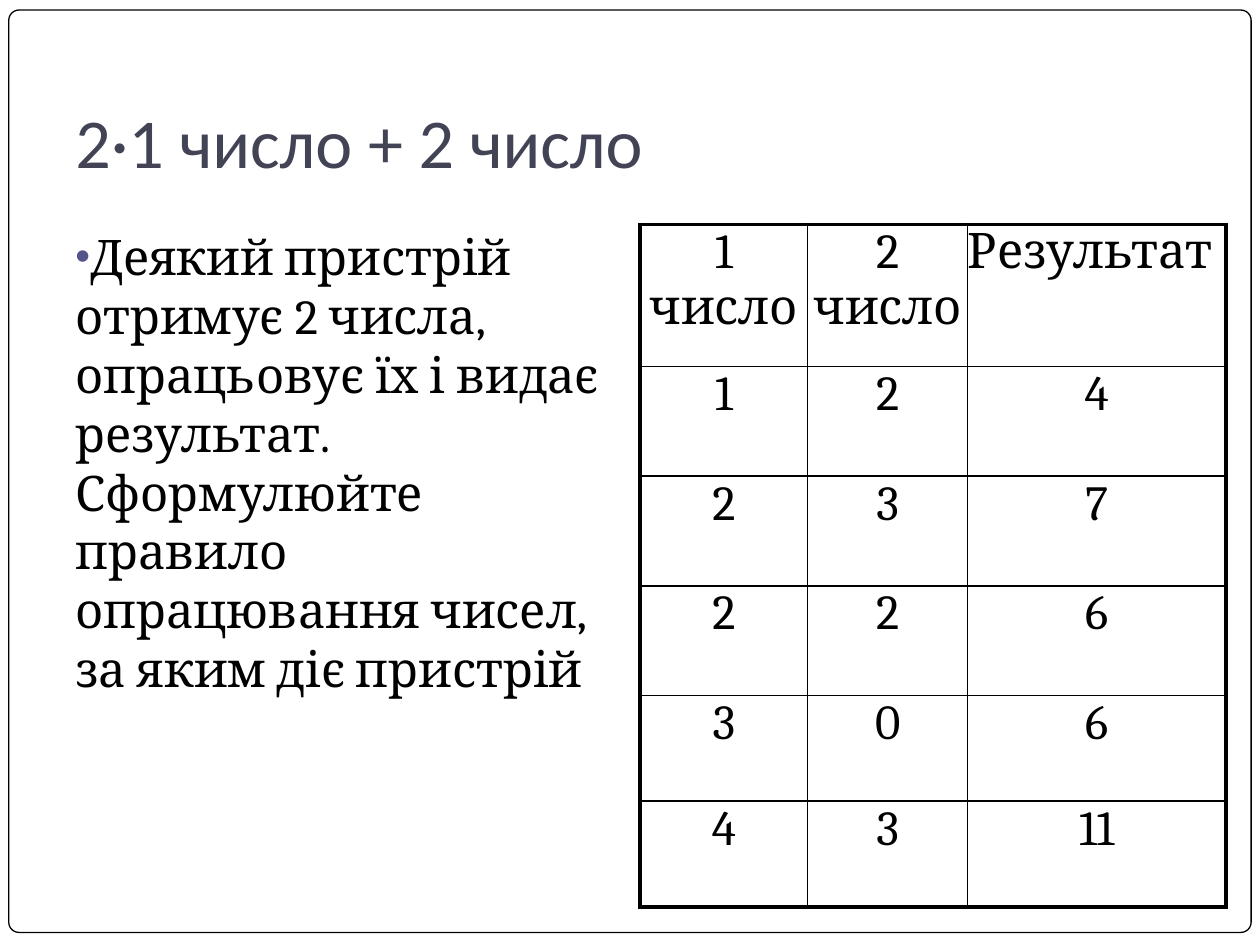
from lxml.etree import SubElement
from pptx import Presentation
from pptx.dml.color import RGBColor
from pptx.enum.shapes import MSO_SHAPE
from pptx.enum.text import MSO_ANCHOR, PP_ALIGN
from pptx.oxml import parse_xml
from pptx.oxml.ns import nsdecls, qn
from pptx.util import Inches, Pt

COLORS = {"ink": "000000", "paper": "FFFFFF", "title": "424456", "bullet": "53548A"}
THIN, THICK = 1, 2.25
COLS = [1.33, 1.27, 2.05]
ROWS = [1.13, 0.87, 0.87, 0.87, 0.84, 0.84]
DATA = [
    ["1 число", "2 число", "Результат"],
    [1, 2, 4],
    [2, 3, 7],
    [2, 2, 6],
    [3, 0, 6],
    [4, 3, 11],
]


def color(name):
    return RGBColor.from_string(COLORS[name])


def style(para, size, face, tone):
    for run in para.runs:
        run.font.size = Pt(size)
        run.font.name = face
        run.font.bold = False
        run.font.color.rgb = color(tone)


def add_text(slide, box, text, size, face, tone):
    frame = slide.shapes.add_textbox(*map(Inches, box)).text_frame
    frame.word_wrap = True
    frame.text = text
    style(frame.paragraphs[0], size, face, tone)
    return frame


def add_frame(slide, box):
    frame = slide.shapes.add_shape(MSO_SHAPE.ROUNDED_RECTANGLE, *map(Inches, box))
    frame.adjustments[0] = 0.011
    frame.shadow.inherit = False
    frame.fill.solid()
    frame.fill.fore_color.rgb = color("paper")
    frame.line.color.rgb = color("ink")
    frame.line.width = Pt(0.75)


def add_title(slide, box):
    frame = add_text(slide, box, "2·1 число + 2 число", 40, "Calibri", "title")
    frame.vertical_anchor = MSO_ANCHOR.BOTTOM
    frame.margin_bottom = Inches(0.1)


def add_task(slide, box):
    text = ("Деякий пристрій отримує 2 числа, опрацьовує їх і видає результат. "
            "Сформулюйте правило опрацювання чисел, за яким діє пристрій")
    para = add_text(slide, box, text, 28, "Cambria", "ink").paragraphs[0]
    para.space_before = Pt(5.8)
    props = para._p.get_or_add_pPr()
    props.set("marL", "0")
    props.set("indent", "0")
    tint = SubElement(props, qn("a:buClr"))
    SubElement(tint, qn("a:srgbClr"), val=COLORS["bullet"])
    SubElement(props, qn("a:buSzPct"), val="86000")
    SubElement(props, qn("a:buFont"), typeface="Arial")
    SubElement(props, qn("a:buChar"), char="•")


def set_edges(cell, edges):
    """Draw the cell borders; edges maps L, R, T, B, in that order, to points."""
    props = cell._tc.get_or_add_tcPr()
    for i, (side, width) in enumerate(edges.items()):
        props.insert(i, parse_xml(
            f'<a:ln{side} {nsdecls("a")} w="{Pt(width)}"><a:solidFill>'
            f'<a:srgbClr val="{COLORS["ink"]}"/></a:solidFill></a:ln{side}>'))


def fill_cell(cell, text, align):
    cell.fill.background()
    cell.margin_left = cell.margin_right = 0
    cell.margin_top = cell.margin_bottom = 0
    cell.text_frame.text = str(text)
    para = cell.text_frame.paragraphs[0]
    para.alignment = align
    para.space_before = Pt(5.6)
    style(para, 28, "Cambria", "ink")


def add_grid(slide, left, top):
    box = (left, top, sum(COLS), sum(ROWS))
    table = slide.shapes.add_table(len(ROWS), len(COLS), *map(Inches, box)).table
    table.first_row = table.horz_banding = False
    for col, width in zip(table.columns, COLS):
        col.width = Inches(width)
    for row, height in zip(table.rows, ROWS):
        row.height = Inches(height)
    end_row, end_col = len(ROWS) - 1, len(COLS) - 1
    for r, line in enumerate(DATA):
        for c, text in enumerate(line):
            cell = table.cell(r, c)
            head = r == 0 and c == end_col
            fill_cell(cell, text, PP_ALIGN.LEFT if head else PP_ALIGN.CENTER)
            outer = {"L": c == 0, "R": c == end_col, "T": r == 0, "B": r == end_row}
            set_edges(cell, {s: THICK if out else THIN for s, out in outer.items()})


def main():
    deck = Presentation()
    deck.slide_width, deck.slide_height = Inches(10), Inches(7.5)
    slide = deck.slides.add_slide(deck.slide_layouts[6])
    add_frame(slide, (0.07, 0.08, 9.86, 7.32))
    add_title(slide, (0.5, 0.3, 9, 1.25))
    add_task(slide, (0.5, 1.75, 4.42, 4.95))
    add_grid(slide, 5.08, 1.78)
    deck.save("out.pptx")


if __name__ == "__main__":
    main()
